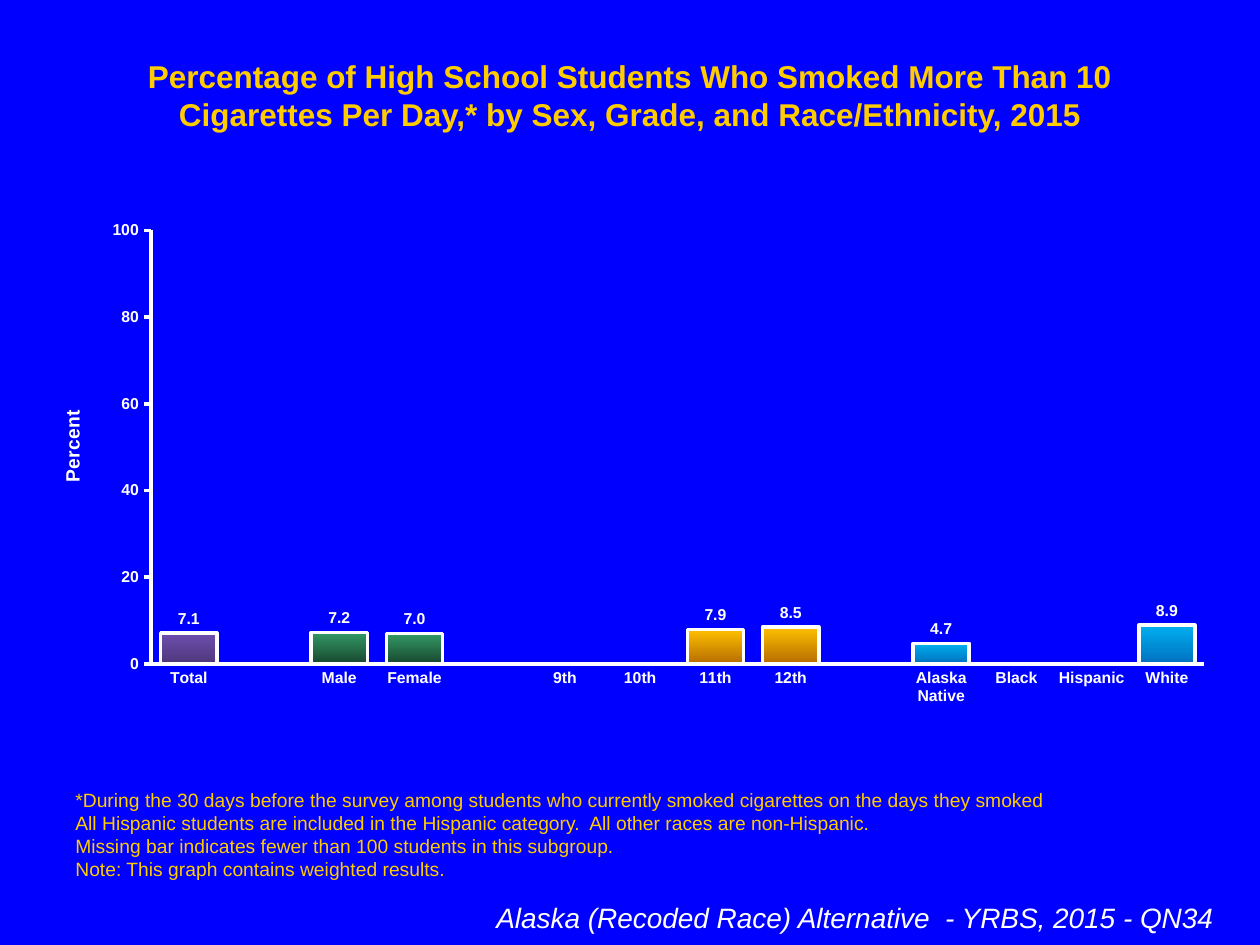
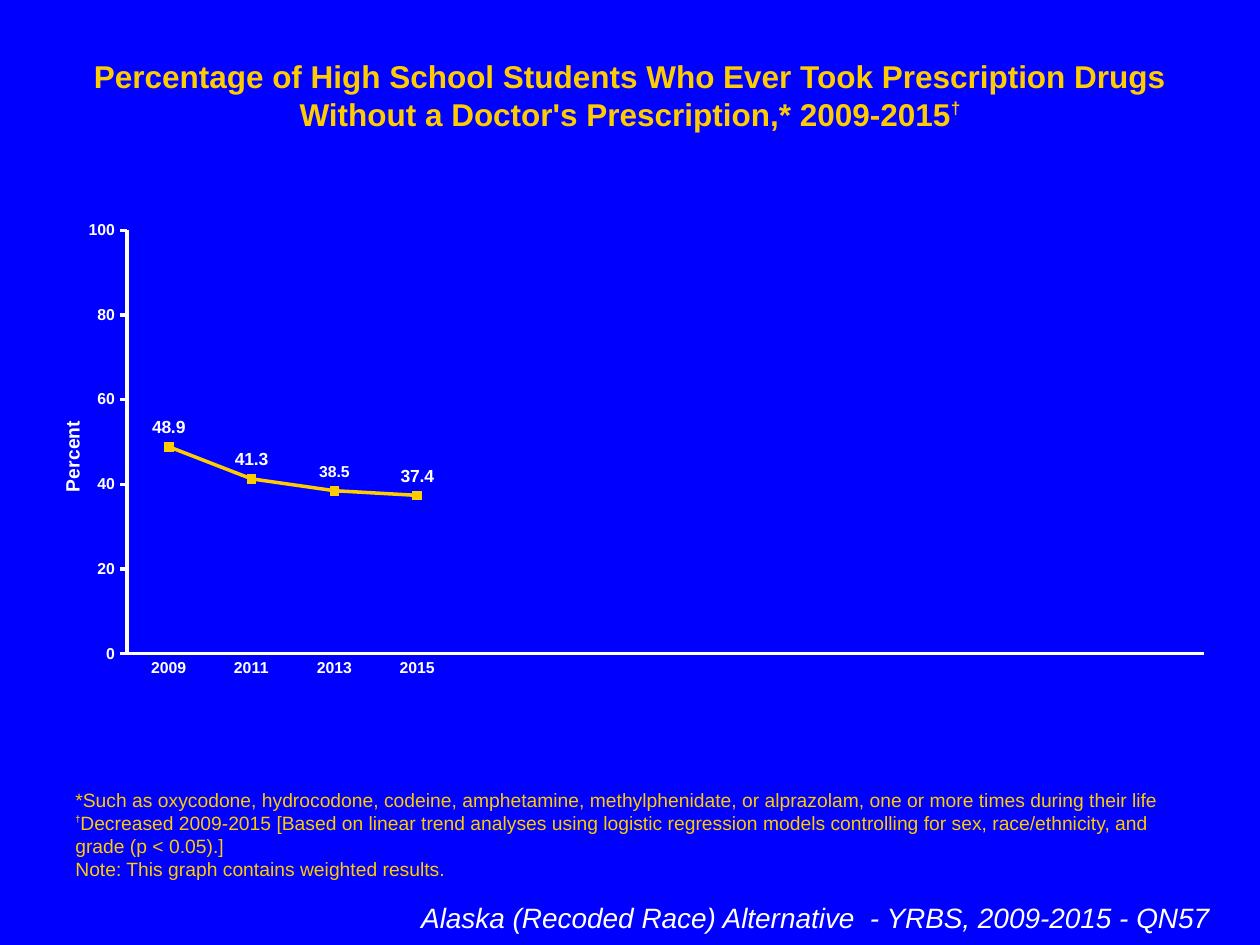
from dataclasses import dataclass

from pptx import Presentation
from pptx.chart.data import CategoryChartData
from pptx.dml.color import RGBColor
from pptx.enum.chart import XL_CHART_TYPE, XL_LABEL_POSITION, XL_MARKER_STYLE, XL_TICK_MARK
from pptx.enum.text import MSO_ANCHOR, MSO_AUTO_SIZE, PP_ALIGN
from pptx.oxml import parse_xml
from pptx.oxml.ns import nsdecls, qn
from pptx.util import Pt

COLUMNS, LINE = XL_CHART_TYPE.COLUMN_CLUSTERED, XL_CHART_TYPE.LINE_MARKERS
LABEL_ABOVE, SQUARE = XL_LABEL_POSITION.ABOVE, XL_MARKER_STYLE.SQUARE
TICK_NONE, TICK_OUT = XL_TICK_MARK.NONE, XL_TICK_MARK.OUTSIDE
TOP, BOTTOM = MSO_ANCHOR.TOP, MSO_ANCHOR.BOTTOM
LEFT, CENTER, RIGHT = PP_ALIGN.LEFT, PP_ALIGN.CENTER, PP_ALIGN.RIGHT
GROW = MSO_AUTO_SIZE.SHAPE_TO_FIT_TEXT


@dataclass(frozen=True)
class Theme:
    font: str = "Arial"
    background: str = "0000FF"
    accent: str = "FFCC00"
    white: str = "FFFFFF"
    bar: str = "26CA59"
    total: tuple = ("6E4EAE", "4F387C")
    sex: tuple = ("339966", "18472F")
    grade: tuple = ("FFC000", "B66D00")
    race: tuple = ("00B0F0", "0070C0")
    title_size: float = 18
    title_mark_size: float = 17
    footnote_size: float = 11
    footnote_mark_size: float = 9
    footer_size: float = 16
    chart_size: float = 18
    axis_title_size: float = 11
    axis_size: float = 9
    line_label_size: float = 10
    line_width: float = 2


THEME = Theme()


def rgb(color):
    return RGBColor.from_string(color)


def set_font(font, size, color=THEME.white, bold=False, italic=False):
    font.name, font.size = THEME.font, Pt(size)
    font.bold, font.italic = bold, italic
    font.color.rgb = rgb(color)


def add_text(para, text, baseline=0, **font_format):
    """Add one formatted span; baseline is a percentage of the type size."""
    span = para.add_run()
    span.text = text
    set_font(span.font, **font_format)
    if baseline:
        span._r.get_or_add_rPr().set("baseline", str(baseline * 1000))


def set_layout(parent, x, y, width=None, height=None):
    """Place a chart part by fractions of the chart area."""
    layout = parent.find(qn("c:layout"))
    if layout is None:
        layout = parse_xml(f"<c:layout {nsdecls('c')}/>")
        parent.insert(0 if parent.find(qn("c:tx")) is None else 1, layout)
    inner = '<c:layoutTarget val="inner"/>' if width else ""
    sizes = f'<c:w val="{width}"/><c:h val="{height}"/>' if width else ""
    layout.append(parse_xml(
        f'<c:manualLayout {nsdecls("c")}>{inner}<c:xMode val="edge"/><c:yMode val="edge"/>'
        f'<c:x val="{x}"/><c:y val="{y}"/>{sizes}</c:manualLayout>'))


class SurveyDeck:
    def __init__(self, theme):
        self.theme = theme
        self.deck = Presentation()
        self.deck.slide_width, self.deck.slide_height = Pt(720), Pt(540)
        fill = self.deck.slide_master.background.fill
        fill.solid()
        fill.fore_color.rgb = rgb(theme.background)
        self.page = None

    def add_page(self):
        self.page = self.deck.slides.add_slide(self.deck.slide_layouts[5])

    def fill_box(self, box, paragraphs, align=LEFT, anchor=TOP, **base):
        """Each paragraph is a list of (text, format changes) pairs."""
        frame = box.text_frame
        frame.word_wrap, frame.auto_size = True, GROW
        frame.vertical_anchor = anchor
        for index, spans in enumerate(paragraphs):
            para = frame.add_paragraph() if index else frame.paragraphs[0]
            para.alignment = align
            for text, changes in spans:
                add_text(para, text, **{**base, **changes})

    def title(self, *spans):
        box = self.page.shapes.title
        box.left, box.top, box.width, box.height = Pt(36), Pt(28.8), Pt(648), Pt(28.8)
        self.fill_box(box, [spans], CENTER, size=self.theme.title_size,
                      color=self.theme.accent, bold=True)

    def footnotes(self, *paragraphs):
        box = self.page.shapes.add_textbox(Pt(36), Pt(486), Pt(648), Pt(20.9))
        self.fill_box(box, paragraphs, anchor=BOTTOM, size=self.theme.footnote_size,
                      color=self.theme.accent)

    def footer(self, text, left, right):
        box = self.page.shapes.add_textbox(Pt(left), Pt(511.2), Pt(right - left), Pt(26.6))
        self.fill_box(box, [[(text, {})]], RIGHT, size=self.theme.footer_size, italic=True)

    def chart(self, kind, categories, values, plot_area, title_top):
        data = CategoryChartData()
        data.categories = categories
        data.add_series("Series 1", values)
        chart = self.page.shapes.add_chart(
            kind, Pt(18), Pt(120.2), Pt(684), Pt(288), data).chart
        chart.has_title = chart.has_legend = False
        set_font(chart.font, self.theme.chart_size)
        set_layout(chart.element.chart.plotArea, *plot_area)
        self.format_axes(chart, title_top)
        chart.plots[0].vary_by_categories = False
        return chart

    def format_axes(self, chart, title_top):
        for axis, tick in ((chart.category_axis, TICK_NONE), (chart.value_axis, TICK_OUT)):
            axis.has_major_gridlines = False
            axis.major_tick_mark, axis.minor_tick_mark = tick, TICK_NONE
            set_font(axis.tick_labels.font, self.theme.axis_size, bold=True)
            self.outline(axis.format.line, self.theme.white)
        scale = chart.value_axis
        scale.minimum_scale, scale.maximum_scale, scale.major_unit = 0, 100, 20
        scale.tick_labels.number_format = "#,##0"
        scale.tick_labels.number_format_is_linked = False
        scale.has_title = True
        frame = scale.axis_title.text_frame
        add_text(frame.paragraphs[0], "Percent", size=self.theme.axis_title_size, bold=True)
        frame._txBody.bodyPr.set("rot", "-5400000")
        set_layout(scale.axis_title.element, 0.02, title_top)

    def outline(self, line, color):
        line.color.rgb = rgb(color)
        line.width = Pt(self.theme.line_width)

    def value_labels(self, series, size):
        labels = series.data_labels
        labels.show_value = True
        labels.number_format, labels.number_format_is_linked = "#,##0.0", False
        set_font(labels.font, size, bold=True)
        return labels

    def group_chart(self, groups, **placing):
        """Draw bars in groups of one gradient, with an empty category between groups."""
        categories, values, gradients = [], [], []
        for gradient, bars in groups:
            if categories:
                bars = {"": None, **bars}
            categories += bars.keys()
            values += bars.values()
            gradients += [gradient] * len(bars)
        chart = self.chart(COLUMNS, categories, values, **placing)
        plot = chart.plots[0]
        plot.gap_width, plot.overlap = 34, 100
        series = plot.series[0]
        series.format.fill.solid()
        series.format.fill.fore_color.rgb = rgb(self.theme.bar)
        self.outline(series.format.line, self.theme.white)
        self.value_labels(series, self.theme.axis_size)
        for index, (category, gradient) in enumerate(zip(categories, gradients)):
            if category:
                bar = series.points[index].format
                bar.fill.gradient()
                bar.fill.gradient_angle = 270
                for stop, color in zip(bar.fill.gradient_stops, gradient):
                    stop.color.rgb = rgb(color)
                self.outline(bar.line, self.theme.white)

    def trend_chart(self, trend, slots, small_label, **placing):
        """Draw a line over the first of the given number of category slots."""
        spare = slots - len(trend)
        chart = self.chart(LINE, [*trend, *[""] * spare],
                           [*trend.values(), *[None] * spare], **placing)
        series = chart.plots[0].series[0]
        series.smooth = False
        self.outline(series.format.line, self.theme.accent)
        marker = series.marker
        marker.style, marker.size = SQUARE, 5
        marker.format.fill.solid()
        marker.format.fill.fore_color.rgb = rgb(self.theme.accent)
        marker.format.line.color.rgb = rgb(self.theme.accent)
        self.value_labels(series, self.theme.line_label_size).position = LABEL_ABOVE
        label = series.points[list(trend).index(small_label)].data_label
        set_font(label.font, self.theme.axis_size, bold=True)
        label.position = LABEL_ABOVE


def main():
    survey = SurveyDeck(THEME)
    weighted = [("Note: This graph contains weighted results.", {})]

    # Smoking by sex, grade and race
    survey.add_page()
    survey.title(("Percentage of High School Students Who Smoked More Than 10 Cigarettes "
                  "Per Day,* by Sex, Grade, and Race/Ethnicity, 2015", {}))
    survey.footnotes(
        [("*During the 30 days before the survey among students who currently smoked "
          "cigarettes on the days they smoked", {})],
        [("All Hispanic students are included in the Hispanic category.  "
          "All other races are non-Hispanic.", {})],
        [("Missing bar indicates fewer than 100 students in this subgroup.", {})],
        weighted)
    survey.footer("Alaska (Recoded Race) Alternative  - YRBS, 2015 - QN34", 66.2, 700.6)
    survey.group_chart(
        [(THEME.total, {"Total": 7.1}),
         (THEME.sex, {"Male": 7.2, "Female": 7.0}),
         (THEME.grade, {"9th": None, "10th": None, "11th": 7.9, "12th": 8.5}),
         (THEME.race, {"Alaska Native": 4.7, "Black": None, "Hispanic": None, "White": 8.9})],
        plot_area=(0.1, 0.04, 0.88, 0.86), title_top=0.39)

    # Prescription drug trend
    survey.add_page()
    survey.title(("Percentage of High School Students Who Ever Took Prescription Drugs "
                  "Without a Doctor's Prescription,* 2009-2015", {}),
                 ("†", {"size": THEME.title_mark_size, "baseline": 40}))
    survey.footnotes(
        [("*Such as oxycodone, hydrocodone, codeine, amphetamine, methylphenidate, "
          "or alprazolam, one or more times during their life", {})],
        [("†", {"size": THEME.footnote_mark_size, "bold": True, "baseline": 50}),
         ("Decreased 2009-2015 [Based on linear trend analyses using logistic regression "
          "models controlling for sex, race/ethnicity, and grade (p < 0.05).]", {})],
        weighted)
    survey.footer("Alaska (Recoded Race) Alternative  - YRBS, 2009-2015 - QN57", 138.2, 698.4)
    survey.trend_chart(
        {"2009": 48.9, "2011": 41.3, "2013": 38.5, "2015": 37.4},
        slots=13, small_label="2013",
        plot_area=(0.08, 0.04, 0.9, 0.84), title_top=0.41)

    survey.deck.save("out.pptx")


if __name__ == "__main__":
    main()
